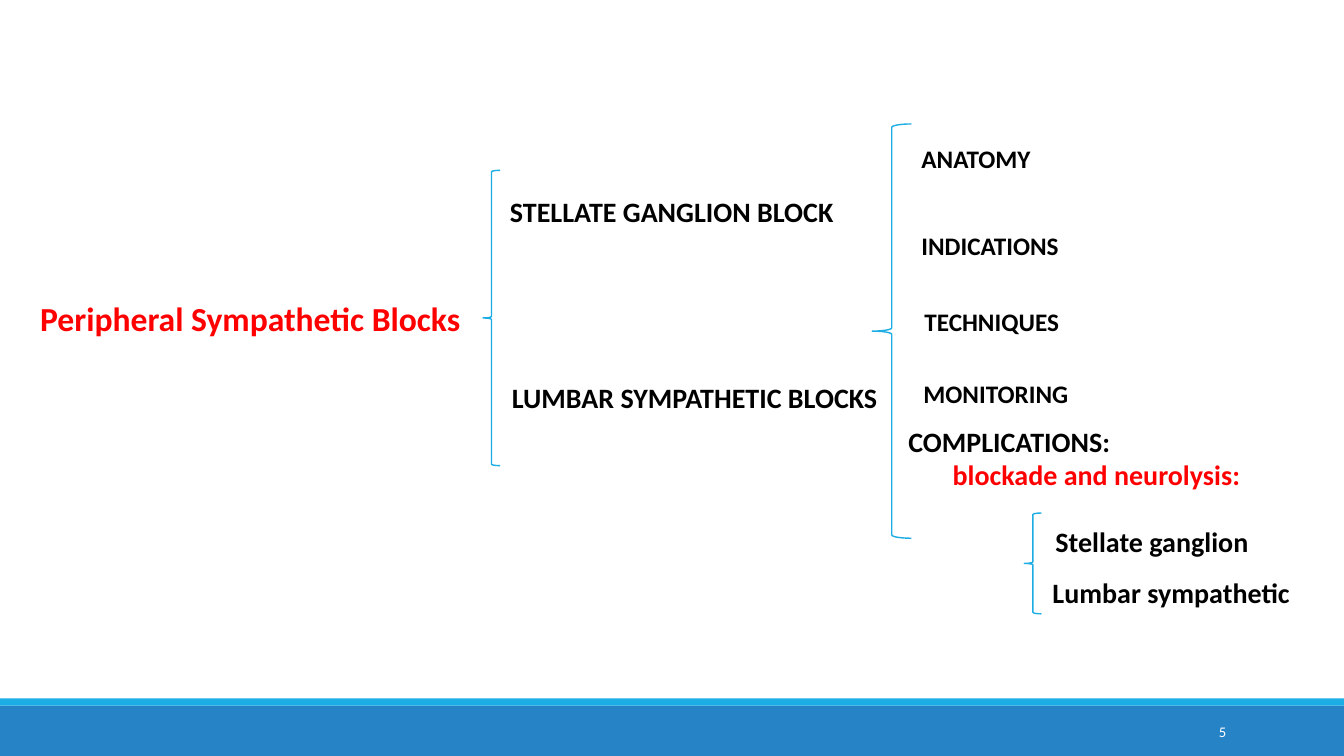
"""Build a slide that maps peripheral sympathetic blocks with nested braces."""
import dataclasses

import pptx
import pptx.dml.color
import pptx.enum.shapes
import pptx.enum.text
import pptx.slide
import pptx.util

Inches = pptx.util.Inches
Align = pptx.enum.text.PP_ALIGN
Anchor = pptx.enum.text.MSO_ANCHOR
Preset = pptx.enum.shapes.MSO_SHAPE

COLORS = {
    "footer": "2683C6",
    "accent": "1CADE4",
    "highlight": "FF0000",
    "text": "000000",
    "number": "FFFFFF",
}


@dataclasses.dataclass(frozen=True)
class Box:
    left: float
    top: float
    width: float
    height: float

    def lengths(self) -> tuple[int, ...]:
        return tuple(Inches(value) for value in dataclasses.astuple(self))


@dataclasses.dataclass(frozen=True)
class Line:
    text: str
    color: str = "text"
    indent: float = 0


@dataclasses.dataclass(frozen=True)
class Label:
    box: Box
    lines: tuple[Line, ...]
    size: float = 20
    bold: bool = True
    wrap: bool = False
    align: Align = Align.LEFT
    anchor: Anchor = Anchor.TOP


@dataclasses.dataclass(frozen=True)
class Bar:
    box: Box
    color: str


BARS = (
    Bar(Box(0, 7, 13.33, 0.5), "footer"),
    Bar(Box(0, 6.93, 13.33, 0.07), "accent"),
)

BRACES = (
    Box(4.79, 1.69, 0.17, 2.93),
    Box(8.65, 1.23, 0.39, 4.11),
    Box(10.16, 5.09, 0.17, 1),
)

LABELS = (
    Label(Box(0.3, 2.91, 4.49, 0.5),
          (Line("Peripheral Sympathetic Blocks", "highlight"),), size=24),
    Label(Box(4.96, 1.88, 3.5, 0.44), (Line("STELLATE GANGLION BLOCK"),)),
    Label(Box(4.98, 3.73, 3.86, 0.44), (Line("LUMBAR SYMPATHETIC BLOCKS"),)),
    Label(Box(9.04, 1.37, 1.29, 0.4), (Line("ANATOMY"),), size=18),
    Label(Box(9.04, 2.24, 1.57, 0.4), (Line("INDICATIONS"),), size=18),
    Label(Box(9.07, 2.99, 1.55, 0.4), (Line("TECHNIQUES"),), size=18),
    Label(Box(9.06, 3.7, 1.71, 0.4), (Line("MONITORING"),), size=18),
    Label(Box(8.85, 4.16, 3.71, 0.77),
          (Line("COMPLICATIONS:", indent=0.06),
           Line("blockade and neurolysis:", "highlight", 0.5)), wrap=True),
    Label(Box(10.37, 5.15, 2.19, 0.44), (Line("Stellate ganglion"),)),
    Label(Box(10.34, 5.66, 2.64, 0.44), (Line("Lumbar sympathetic"),)),
    Label(Box(10.83, 7.06, 1.43, 0.4), (Line("5", "number"),), size=10.5,
          bold=False, wrap=True, align=Align.RIGHT, anchor=Anchor.MIDDLE),
)


def rgb(name: str) -> pptx.dml.color.RGBColor:
    return pptx.dml.color.RGBColor.from_string(COLORS[name])


def apply_format(target: object, values: dict[str, object]) -> None:
    for name, value in values.items():
        setattr(target, name, value)


def draw_bar(slide: pptx.slide.Slide, bar: Bar) -> None:
    shape = slide.shapes.add_shape(Preset.RECTANGLE, *bar.box.lengths())
    shape.shadow.inherit = False
    shape.fill.solid()
    shape.fill.fore_color.rgb = rgb(bar.color)
    shape.line.fill.background()


def draw_brace(slide: pptx.slide.Slide, box: Box) -> None:
    shape = slide.shapes.add_shape(Preset.LEFT_BRACE, *box.lengths())
    shape.shadow.inherit = False
    shape.fill.background()
    shape.line.color.rgb = rgb("accent")
    shape.line.width = pptx.util.Pt(1)


def draw_label(slide: pptx.slide.Slide, label: Label) -> None:
    frame = slide.shapes.add_textbox(*label.box.lengths()).text_frame
    apply_format(frame, {"word_wrap": label.wrap, "vertical_anchor": label.anchor})
    for index, line in enumerate(label.lines):
        paragraph = frame.add_paragraph() if index else frame.paragraphs[0]
        paragraph.alignment = label.align
        if line.indent:
            paragraph._p.get_or_add_pPr().set("marL", str(Inches(line.indent)))
        run = paragraph.add_run()
        run.text = line.text
        apply_format(run.font, {
            "name": "Calibri",
            "size": pptx.util.Pt(label.size),
            "bold": label.bold,
        })
        run.font.color.rgb = rgb(line.color)


def main() -> None:
    presentation = pptx.Presentation()
    apply_format(presentation, {
        "slide_width": Inches(13.33),
        "slide_height": Inches(7.5),
    })
    slide = presentation.slides.add_slide(presentation.slide_layouts[6])
    for bar in BARS:
        draw_bar(slide, bar)
    for brace in BRACES:
        draw_brace(slide, brace)
    for label in LABELS:
        draw_label(slide, label)
    presentation.save("out.pptx")


if __name__ == "__main__":
    main()
